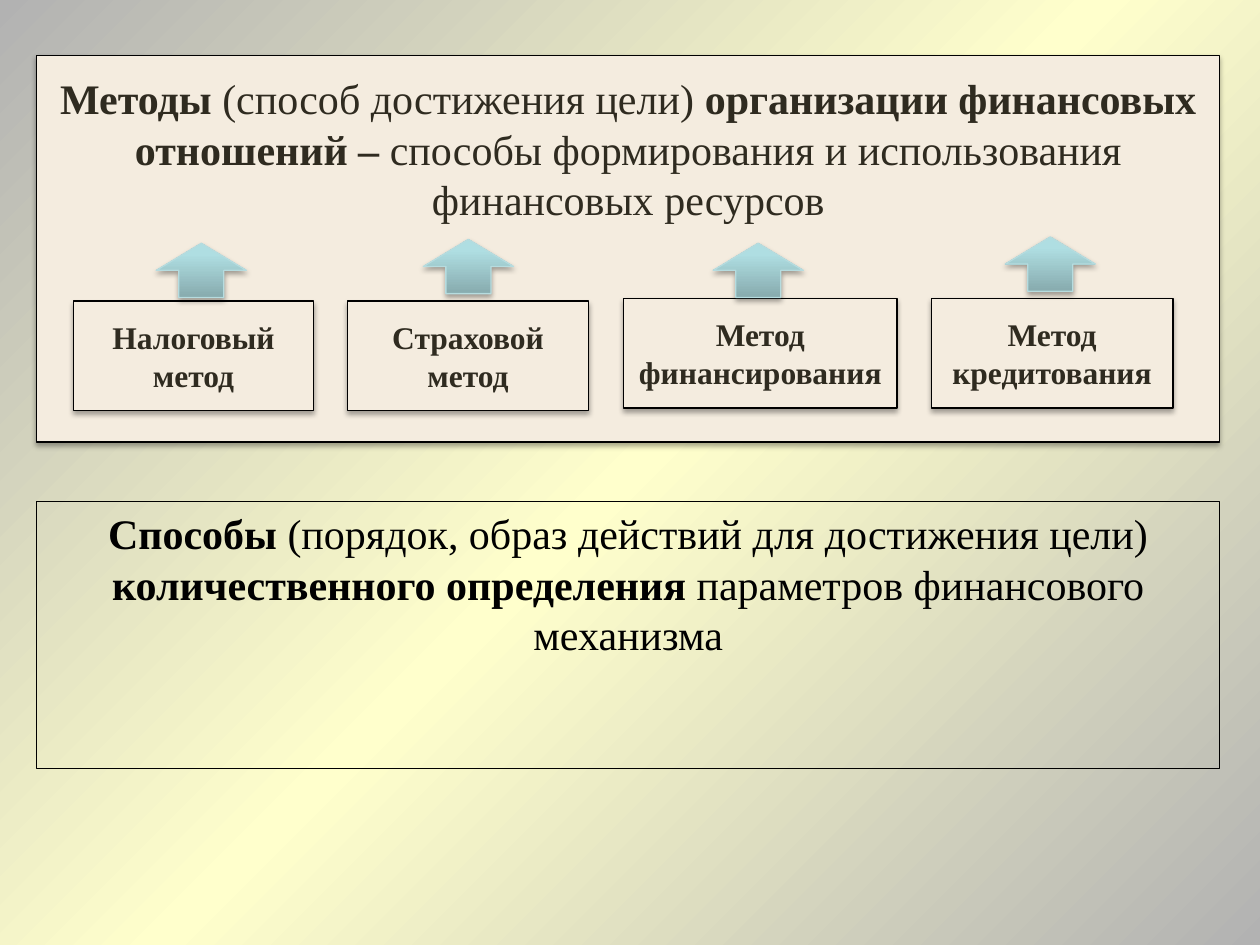
from copy import deepcopy

from lxml.etree import SubElement
from pptx import Presentation
from pptx.dml.color import RGBColor
from pptx.enum.shapes import MSO_SHAPE
from pptx.enum.text import MSO_ANCHOR, PP_ALIGN
from pptx.oxml.ns import qn
from pptx.util import Pt

FONT = "Times New Roman"
BLACK = RGBColor(0x00, 0x00, 0x00)
BROWN = RGBColor(0x2F, 0x2B, 0x20)
CREAM = RGBColor(0xF4, 0xEC, 0xDF)
GREY = RGBColor(0xB2, 0xB2, 0xB2)
YELLOW = RGBColor(0xFF, 0xFF, 0xCC)
TEAL = RGBColor(0x87, 0xAB, 0xAE)
AQUA = RGBColor(0xAF, 0xDE, 0xE2)
LIGHT_AQUA = RGBColor(0xAF, 0xE0, 0xE4)
ARROW_LINE = RGBColor(0xB6, 0xDC, 0xDF)

LEFT, WIDTH = 21, 676
BOX_HEIGHT = 62.6
ARROW_WIDTH, ARROW_HEIGHT = 51.5, 31

METHODS_TEXT = [
    ("Методы ", True),
    ("(способ достижения цели) ", False),
    ("организации финансовых отношений – ", True),
    ("способы формирования и использования финансовых ресурсов", False),
]
WAYS_TEXT = [
    ("Способы ", True),
    ("(порядок, образ действий для достижения цели) ", False),
    ("количественного определения ", True),
    ("параметров финансового механизма", False),
]
METHODS = [
    ("Налоговый метод", 41.8, 172.1, 137.5),
    ("Страховой метод", 198.7, 172.1, 137.5),
    ("Метод финансирования", 356.4, 170.6, 156.2),
    ("Метод кредитования", 532.1, 170.6, 138.2),
]
ARROWS = [(89.3, 139), (241.9, 136.8), (407.5, 139), (574.4, 135.4)]


def set_gradient(fill, element, stops, angle):
    """Give a fill three gradient stops and a counter-clockwise angle."""
    fill.gradient()
    fill.gradient_angle = angle
    stop_list = element.find(".//" + qn("a:gsLst"))
    stop_list.append(deepcopy(stop_list[0]))
    for stop, (position, color) in zip(fill.gradient_stops, stops):
        stop.position = position
        stop.color.rgb = color


def add_shadow(sp):
    """Add a soft shadow straight below a shape."""
    effects = sp.element.spPr.find(qn("a:effectLst"))
    shadow = SubElement(effects, qn("a:outerShdw"), blurRad=str(Pt(3.1)),
                        dist=str(Pt(1.8)), dir="5400000", rotWithShape="0")
    color = SubElement(shadow, qn("a:srgbClr"), val="000000")
    SubElement(color, qn("a:alpha"), val="35000")


def add_shape(s, kind, x, y, w, h, line=BLACK, shadow=True):
    """Add an outlined preset shape."""
    sp = s.shapes.add_shape(kind, Pt(x), Pt(y), Pt(w), Pt(h))
    sp.line.color.rgb = line
    sp.line.width = Pt(0.75)
    sp.shadow.inherit = False
    if shadow:
        add_shadow(sp)
    return sp


def add_box(s, runs, x, y, w, h, size=24, color=BROWN, fill=CREAM,
            anchor=MSO_ANCHOR.TOP, inset=3.6):
    """Add a rectangle with centred text; without a fill it has no shadow."""
    sp = add_shape(s, MSO_SHAPE.RECTANGLE, x, y, w, h, shadow=fill is not None)
    if fill is None:
        sp.fill.background()
    else:
        sp.fill.solid()
        sp.fill.fore_color.rgb = fill
    tf = sp.text_frame
    tf.word_wrap = True
    tf.vertical_anchor = anchor
    tf.margin_top = Pt(inset)
    p = tf.paragraphs[0]
    p.alignment = PP_ALIGN.CENTER
    for text, bold in runs:
        r = p.add_run()
        r.text = text
        r.font.name = FONT
        r.font.size = Pt(size)
        r.font.bold = bold
        r.font.color.rgb = color


def add_arrow(s, x, y):
    """Add an upward block arrow with a gradient."""
    sp = add_shape(s, MSO_SHAPE.UP_ARROW, x, y, ARROW_WIDTH, ARROW_HEIGHT,
                   line=ARROW_LINE)
    set_gradient(sp.fill, sp.element,
                 [(0, TEAL), (0.8, AQUA), (1, LIGHT_AQUA)], 90)


def main():
    """Build the slide and save it."""
    prs = Presentation()
    prs.slide_width, prs.slide_height = Pt(720), Pt(540)
    s = prs.slides.add_slide(prs.slide_layouts[6])
    set_gradient(s.background.fill, s.element,
                 [(0, GREY), (0.5, YELLOW), (1, GREY)], 315)
    add_box(s, METHODS_TEXT, LEFT, 31.7, WIDTH, 221, inset=10)
    add_box(s, WAYS_TEXT, LEFT, 286.6, WIDTH, 152.6, color=BLACK, fill=None)
    for text, x, y, w in METHODS:
        add_box(s, [(text, True)], x, y, w, BOX_HEIGHT, size=18,
                anchor=MSO_ANCHOR.MIDDLE)
    for x, y in ARROWS:
        add_arrow(s, x, y)
    prs.save("out.pptx")


if __name__ == "__main__":
    main()
